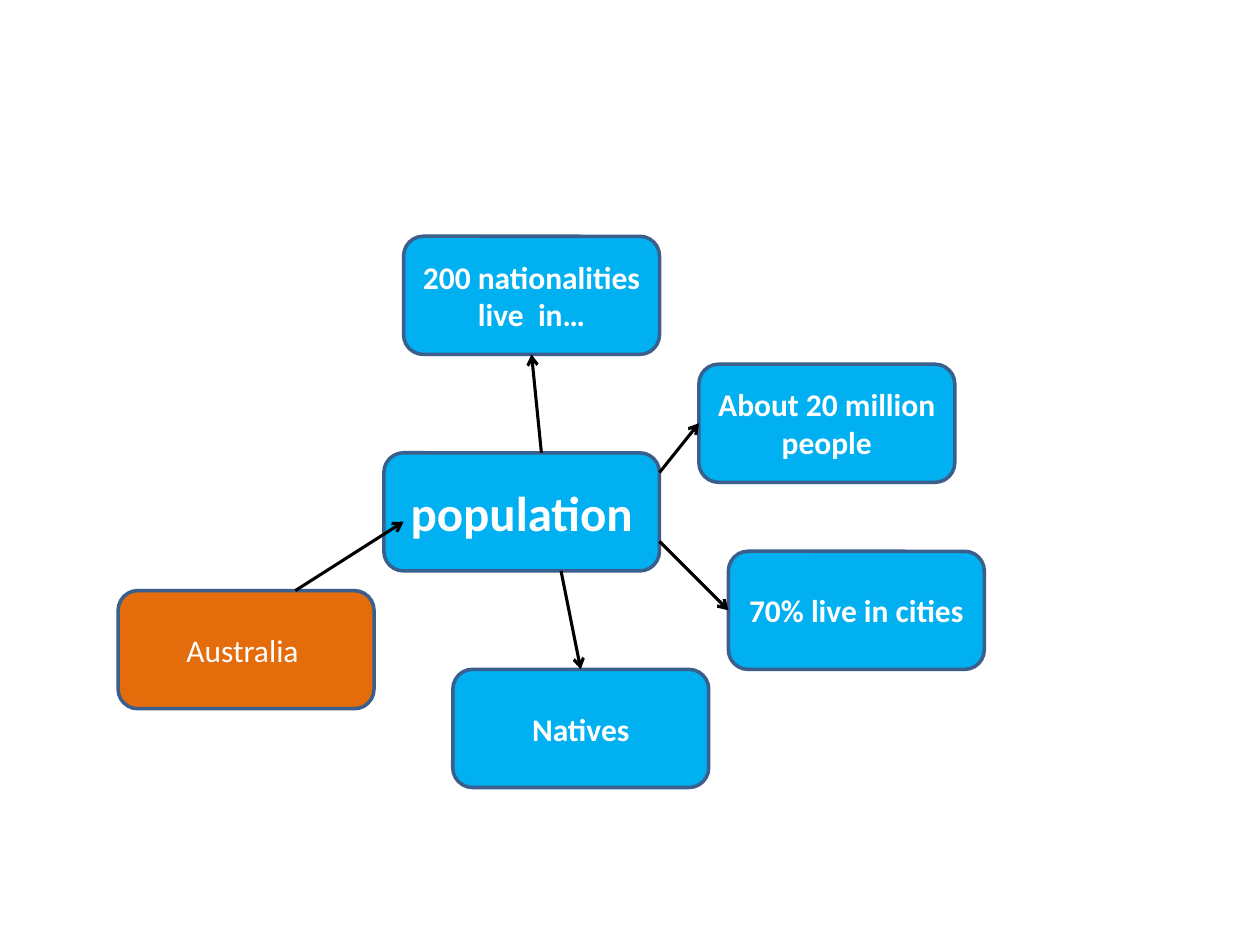
from lxml.etree import SubElement
from pptx import Presentation
from pptx.dml.color import RGBColor
from pptx.enum.shapes import MSO_CONNECTOR, MSO_SHAPE
from pptx.enum.text import MSO_ANCHOR, PP_ALIGN
from pptx.oxml.ns import qn
from pptx.util import Inches, Pt

COLORS = {"topic": "E46C0A", "fact": "00B0F0", "border": "3A5F8C",
          "text": "FFFFFF", "arrow": "000000"}

# Places are in cells of a square grid, 128 columns across the slide
COLUMNS = 128
NODE_WIDTH, NODE_HEIGHT = 26, 12

# text, column, row, then whatever differs from a plain fact node
NODES = [
    ("Australia ", 12, 60, {"fill": "topic", "bold": False}),
    ("population", 39, 46, {"width": 28, "size": 28}),
    ("Natives", 46, 68, {}),
    ("70% live in cities", 74, 56, {}),
    ("About 20 million people", 71, 37, {}),
    ("200 nationalities live  in…", 41, 24, {}),
]

# start and end of each arrow
ARROWS = [
    ((30, 60), (41, 53)),  # Australia to population
    ((55, 46), (54, 36)),  # population to nationalities
    ((67, 48), (71, 43)),  # population to people
    ((67, 55), (74, 62)),  # population to cities
    ((57, 58), (59, 68)),  # population to natives
]

deck = Presentation()
deck.slide_width, deck.slide_height = Inches(10), Inches(7.5)
slide = deck.slides.add_slide(deck.slide_layouts[6])


def cells(*counts):
    return [round(deck.slide_width * count / COLUMNS) for count in counts]


def color(name):
    return RGBColor.from_string(COLORS[name])


def add_node(text, column, row, fill="fact", bold=True, width=NODE_WIDTH, size=18):
    node = slide.shapes.add_shape(MSO_SHAPE.ROUNDED_RECTANGLE,
                                  *cells(column, row, width, NODE_HEIGHT))
    node.shadow.inherit = False
    node.fill.solid()
    node.fill.fore_color.rgb = color(fill)
    node.line.color.rgb = color("border")
    node.line.width = Pt(2)

    frame = node.text_frame
    frame.word_wrap = True
    frame.vertical_anchor = MSO_ANCHOR.MIDDLE
    label = frame.paragraphs[0]
    label.alignment = PP_ALIGN.CENTER
    run = label.add_run()
    run.text = text
    for key, value in {"name": "Calibri", "size": Pt(size), "bold": bold}.items():
        setattr(run.font, key, value)
    run.font.color.rgb = color("text")


def add_arrow(start, end):
    arrow = slide.shapes.add_connector(MSO_CONNECTOR.STRAIGHT, *cells(*start, *end))
    arrow.line.color.rgb = color("arrow")
    arrow.line.width = Pt(1.75)
    SubElement(arrow.line._get_or_add_ln(), qn("a:tailEnd"), type="arrow")
    SubElement(arrow._element.spPr, qn("a:effectLst"))


# Mind map: nodes first, arrows on top
for text, column, row, changes in NODES:
    add_node(text, column, row, **changes)
for start, end in ARROWS:
    add_arrow(start, end)

deck.save("out.pptx")
